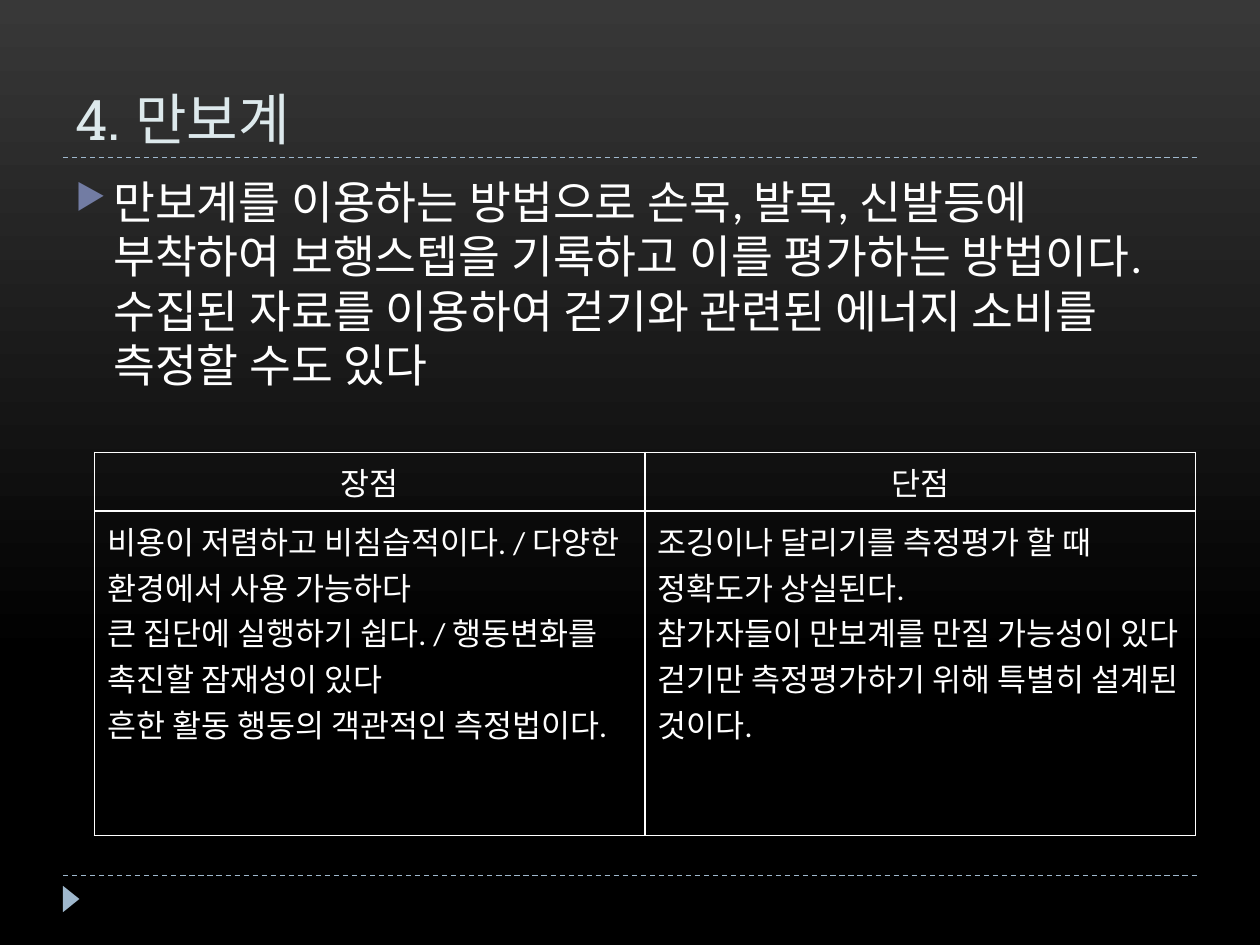
import pptx
import pptx.dml.color
import pptx.enum.dml
import pptx.enum.shapes
import pptx.enum.text
import pptx.oxml
import pptx.oxml.ns
import pptx.util
import lxml.etree

Pt = pptx.util.Pt
ALIGN = pptx.enum.text.PP_ALIGN
ANCHOR = pptx.enum.text.MSO_ANCHOR
NAMESPACE = pptx.oxml.ns.nsdecls("a")

COLOURS = {
    "black": "000000",
    "charcoal": "383838",
    "white": "FFFFFF",
    "title": "DDE9EC",
    "accent": "9FB8CD",
    "bullet": "727CA3",
}


def rgb(name):
    return pptx.dml.color.RGBColor.from_string(COLOURS[name])


def add_xml(parent, xml):
    parent.append(pptx.oxml.parse_xml(xml))


class SlideBuilder:
    """Holds the style and the current slide."""

    title_font = "Roboto Slab"
    body_font = "Calibri"

    def __init__(self, slide):
        self.slide = slide

    def background(self, stops, angle):
        fill = self.slide.background.fill
        fill.gradient()
        fill.gradient_angle = angle
        stop_list = self.slide._element.xpath(".//a:gsLst")[0]
        for stop in list(stop_list):
            stop_list.remove(stop)
        for position, colour in stops:
            add_xml(stop_list, f'<a:gs {NAMESPACE} pos="{position * 1000}">'
                               f'<a:srgbClr val="{COLOURS[colour]}"/></a:gs>')

    def dashed_line(self, left, right, top):
        line = self.slide.shapes.add_connector(
            pptx.enum.shapes.MSO_CONNECTOR.STRAIGHT,
            Pt(left), Pt(top), Pt(right), Pt(top))
        line.line.color.rgb = rgb("accent")
        line.line.width = Pt(0.75)
        line.line.dash_style = pptx.enum.dml.MSO_LINE.DASH
        add_xml(line._element.spPr, f"<a:effectLst {NAMESPACE}/>")

    def triangle(self, left, top, width, height, rotation):
        shape = self.slide.shapes.add_shape(
            pptx.enum.shapes.MSO_SHAPE.ISOSCELES_TRIANGLE,
            Pt(left), Pt(top), Pt(width), Pt(height))
        shape.rotation = rotation
        shape.shadow.inherit = False
        shape.fill.solid()
        shape.fill.fore_color.rgb = rgb("accent")
        shape.line.fill.background()

    def format_paragraph(self, paragraph, size, font, colour, spacing=None):
        if spacing:
            paragraph.line_spacing = Pt(spacing)
        for run in paragraph.runs:
            run.font.size = Pt(size)
            run.font.name = font
            run.font.color.rgb = rgb(colour)
            add_xml(run.font._element, f'<a:ea {NAMESPACE} typeface="{font}"/>')

    def text(self, content, left, top, width, height, size, font, colour,
             anchor=ANCHOR.TOP, spacing=None):
        box = self.slide.shapes.add_textbox(Pt(left), Pt(top), Pt(width), Pt(height))
        frame = box.text_frame
        frame.word_wrap = True
        frame.vertical_anchor = anchor
        frame.text = content
        self.format_paragraph(frame.paragraphs[0], size, font, colour, spacing)
        return frame.paragraphs[0]

    def bullet(self, paragraph, character, indent, percent):
        properties = paragraph._p.get_or_add_pPr()
        properties.set("marL", str(Pt(indent)))
        properties.set("indent", str(-Pt(indent)))
        add_xml(properties, f'<a:buClr {NAMESPACE}><a:srgbClr val="{COLOURS["bullet"]}"/></a:buClr>')
        add_xml(properties, f'<a:buSzPct {NAMESPACE} val="{percent * 1000}"/>')
        add_xml(properties, f'<a:buChar {NAMESPACE} char="{character}"/>')

    def cell_borders(self, cell):
        properties = cell._tc.get_or_add_tcPr()
        for index, side in enumerate(("lnL", "lnR", "lnT", "lnB")):
            border = pptx.oxml.parse_xml(
                f'<a:{side} {NAMESPACE} w="{Pt(1)}"><a:solidFill>'
                f'<a:srgbClr val="{COLOURS["white"]}"/></a:solidFill></a:{side}>')
            properties.insert(index, border)

    def table(self, rows, left, top, column_width, row_heights):
        table = self.slide.shapes.add_table(
            len(rows), len(rows[0]), Pt(left), Pt(top),
            Pt(column_width * len(rows[0])), Pt(sum(row_heights))).table
        table.first_row = table.horz_banding = False
        for column in table.columns:
            column.width = Pt(column_width)
        for row_index, row in enumerate(rows):
            table.rows[row_index].height = Pt(row_heights[row_index])
            for column_index, content in enumerate(row):
                cell = table.cell(row_index, column_index)
                cell.fill.background()
                self.cell_borders(cell)
                cell.text_frame.text = content
                for paragraph in cell.text_frame.paragraphs:
                    paragraph.alignment = ALIGN.LEFT if row_index else ALIGN.CENTER
                    self.format_paragraph(paragraph, 18, self.body_font, "white", 26.1)


def main():
    presentation = pptx.Presentation()
    presentation.slide_width, presentation.slide_height = Pt(720), Pt(540)
    builder = SlideBuilder(presentation.slides.add_slide(presentation.slide_layouts[6]))

    # Backdrop and rules
    builder.background([(0, "black"), (30, "black"), (100, "charcoal")], 90)
    for top in (500.4, 90):
        builder.dashed_line(36, 684, top)
    builder.triangle(33.1, 509, 15.1, 9.4, 90)

    # Title and description
    builder.text("4. 만보계", 36, 12.2, 648, 77.8, 32, builder.title_font,
                 "title", anchor=ANCHOR.BOTTOM)
    description = builder.text(
        "만보계를 이용하는 방법으로 손목, 발목, 신발등에 부착하여 보행스텝을 기록하고 "
        "이를 평가하는 방법이다. 수집된 자료를 이용하여 걷기와 관련된 에너지 소비를 "
        "측정할 수도 있다",
        36, 96, 648, 388.8, 26, builder.body_font, "white", spacing=31.1)
    description.space_before = Pt(6)
    builder.bullet(description, "▶", 21.6, 76)

    # Advantages and disadvantages
    advantages = "\n".join((
        "비용이 저렴하고 비침습적이다. / 다양한 환경에서 사용 가능하다",
        "큰 집단에 실행하기 쉽다. / 행동변화를 촉진할 잠재성이 있다",
        "흔한 활동 행동의 객관적인 측정법이다."))
    disadvantages = "\n".join((
        "조깅이나 달리기를 측정평가 할 때 정확도가 상실된다.",
        "참가자들이 만보계를 만질 가능성이 있다",
        "걷기만 측정평가하기 위해 특별히 설계된 것이다."))
    builder.table([("장점", "단점"), (advantages, disadvantages)],
                  54, 258.5, 314.6, (33.5, 185.5))

    presentation.save("out.pptx")


if __name__ == "__main__":
    main()
